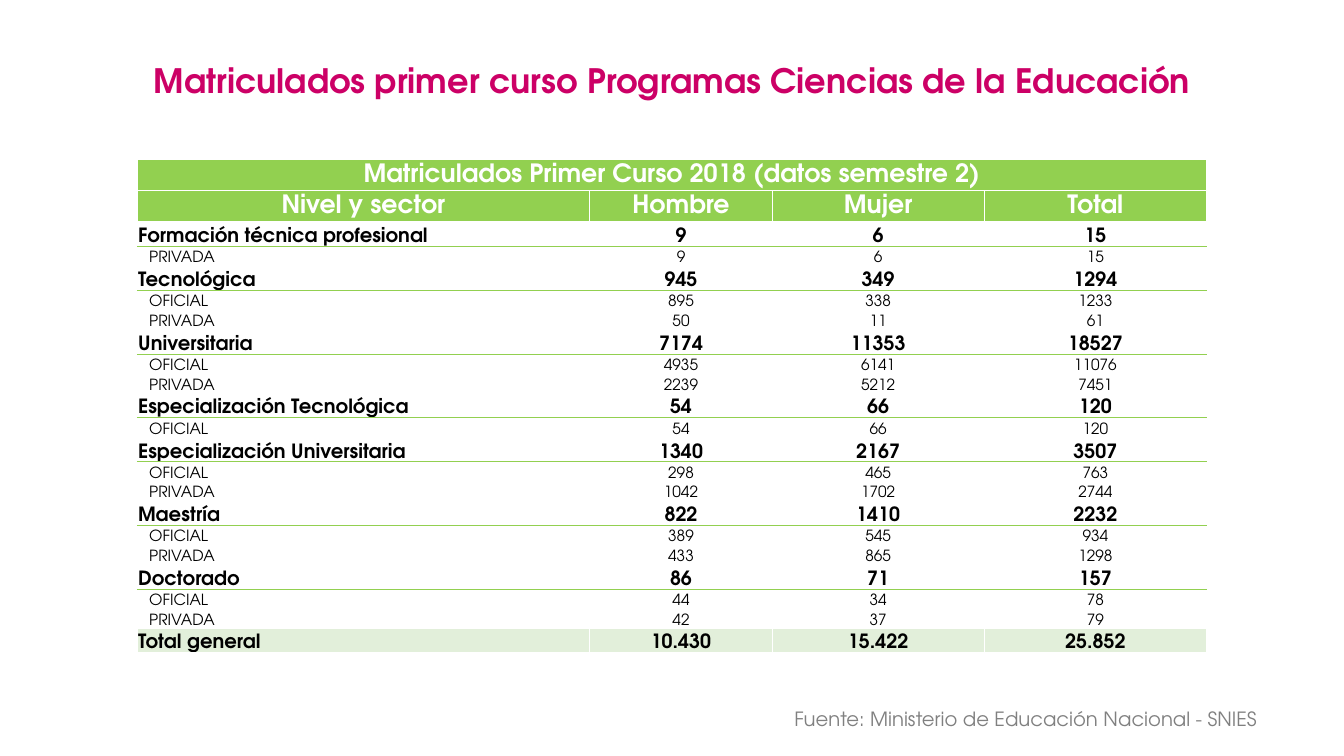
from pptx import Presentation
from pptx.dml.color import RGBColor
from pptx.enum.text import MSO_ANCHOR as ANCHOR, MSO_AUTO_SIZE as AUTO, PP_ALIGN as ALIGN
from pptx.oxml import parse_xml
from pptx.oxml.ns import nsdecls
from pptx.util import Inches, Pt

FONT = "TeX Gyre Adventor"
MAGENTA = RGBColor(0xCC, 0x00, 0x66)
GREEN = RGBColor(0x92, 0xD0, 0x50)
PALE_GREEN = RGBColor(0xE2, 0xEF, 0xDA)
GRAY = RGBColor(0x80, 0x80, 0x80)
WHITE = RGBColor(0xFF, 0xFF, 0xFF)
BLACK = RGBColor(0x00, 0x00, 0x00)

COLUMN_WIDTHS = (4.49, 1.81, 2.1, 2.21)
SECTORS = ("OFICIAL", "PRIVADA")
ROWS = [
    ("Matriculados Primer Curso 2018 (datos semestre 2)", "", "", ""),
    ("Nivel y sector", "Hombre", "Mujer", "Total"),
    ("Formación técnica profesional", "9", "6", "15"),
    ("PRIVADA", "9", "6", "15"),
    ("Tecnológica", "945", "349", "1294"),
    ("OFICIAL", "895", "338", "1233"),
    ("PRIVADA", "50", "11", "61"),
    ("Universitaria", "7174", "11353", "18527"),
    ("OFICIAL", "4935", "6141", "11076"),
    ("PRIVADA", "2239", "5212", "7451"),
    ("Especialización Tecnológica", "54", "66", "120"),
    ("OFICIAL", "54", "66", "120"),
    ("Especialización Universitaria", "1340", "2167", "3507"),
    ("OFICIAL", "298", "465", "763"),
    ("PRIVADA", "1042", "1702", "2744"),
    ("Maestría", "822", "1410", "2232"),
    ("OFICIAL", "389", "545", "934"),
    ("PRIVADA", "433", "865", "1298"),
    ("Doctorado", "86", "71", "157"),
    ("OFICIAL", "44", "34", "78"),
    ("PRIVADA", "42", "37", "79"),
    ("Total general", "10.430", "15.422", "25.852"),
]
HEADER_ROWS = 2
LAST_ROW = len(ROWS) - 1


def format_paragraph(p, size, color, bold, align):
    p.alignment = align
    p.font.name = FONT
    p.font.size = Pt(size)
    p.font.bold = bold
    p.font.color.rgb = color


def is_level(row):
    """True for the bold rows that open a group of sectors."""
    return HEADER_ROWS <= row < LAST_ROW and ROWS[row][0] not in SECTORS


def set_borders(cell, top, bottom):
    tcPr = cell._tc.get_or_add_tcPr()
    for side, color in (("L", WHITE), ("R", WHITE), ("T", top), ("B", bottom)):
        tcPr.append(parse_xml(
            f'<a:ln{side} {nsdecls("a")} w="{Pt(0.5)}"><a:solidFill>'
            f'<a:srgbClr val="{color}"/></a:solidFill></a:ln{side}>'))


def add_title(slide, left, top, width, height):
    title = slide.shapes.title
    title.left, title.top, title.width, title.height = map(
        Inches, (left, top, width, height))
    tf = title.text_frame
    tf.text = "Matriculados primer curso Programas Ciencias de la Educación"
    tf.vertical_anchor = ANCHOR.TOP
    tf.auto_size = AUTO.SHAPE_TO_FIT_TEXT
    p = tf.paragraphs[0]
    p.line_spacing = 1.0
    p.space_before = Pt(0)
    format_paragraph(p, 24, MAGENTA, True, ALIGN.CENTER)


def fill_cell(cell, row, col):
    header, sector = row < HEADER_ROWS, ROWS[row][0] in SECTORS
    cell.text = ROWS[row][col]
    cell.margin_left = Inches(0.12 if sector and col == 0 else 0.01)
    cell.margin_top = cell.margin_right = Inches(0.01)
    cell.margin_bottom = 0
    cell.vertical_anchor = ANCHOR.MIDDLE if header else ANCHOR.BOTTOM
    format_paragraph(cell.text_frame.paragraphs[0],
                     18 if header else 11 if sector else 14,
                     WHITE if header else BLACK, not sector,
                     ALIGN.CENTER if header or col else ALIGN.LEFT)
    set_borders(cell, GREEN if is_level(row - 1) else WHITE,
                GREEN if is_level(row) else WHITE)
    if header or row == LAST_ROW:
        cell.fill.solid()
        cell.fill.fore_color.rgb = GREEN if header else PALE_GREEN
    else:
        cell.fill.background()


def add_enrolment_table(slide, left, top, width, height):
    frame = slide.shapes.add_table(len(ROWS), len(COLUMN_WIDTHS),
                                   *map(Inches, (left, top, width, height)))
    table = frame.table
    table.first_row = table.horz_banding = False
    for column, column_width in zip(table.columns, COLUMN_WIDTHS):
        column.width = Inches(column_width)
    for row, values in enumerate(ROWS):
        table.rows[row].height = Inches(0.19 if values[0] in SECTORS else 0.2)
        for col in range(len(values)):
            fill_cell(table.cell(row, col), row, col)
    table.cell(0, 0).merge(table.cell(0, len(COLUMN_WIDTHS) - 1))
    frame.height = Inches(height)


def add_source_note(slide, left, top, width, height):
    box = slide.shapes.add_textbox(*map(Inches, (left, top, width, height)))
    tf = box.text_frame
    tf.word_wrap = True
    tf.auto_size = AUTO.SHAPE_TO_FIT_TEXT
    tf.text = "Fuente: Ministerio de Educación Nacional - SNIES"
    format_paragraph(tf.paragraphs[0], 14, GRAY, False, ALIGN.RIGHT)


def main():
    prs = Presentation()
    prs.slide_width, prs.slide_height = Inches(13.33), Inches(7.5)
    slide = prs.slides.add_slide(prs.slide_layouts[5])
    add_title(slide, 1.2, 0.54, 10.93, 0.5)
    add_enrolment_table(slide, 1.36, 1.58, sum(COLUMN_WIDTHS), 4.9)
    add_source_note(slide, 5.9, 6.96, 6.67, 0.34)
    prs.save("out.pptx")


if __name__ == "__main__":
    main()
